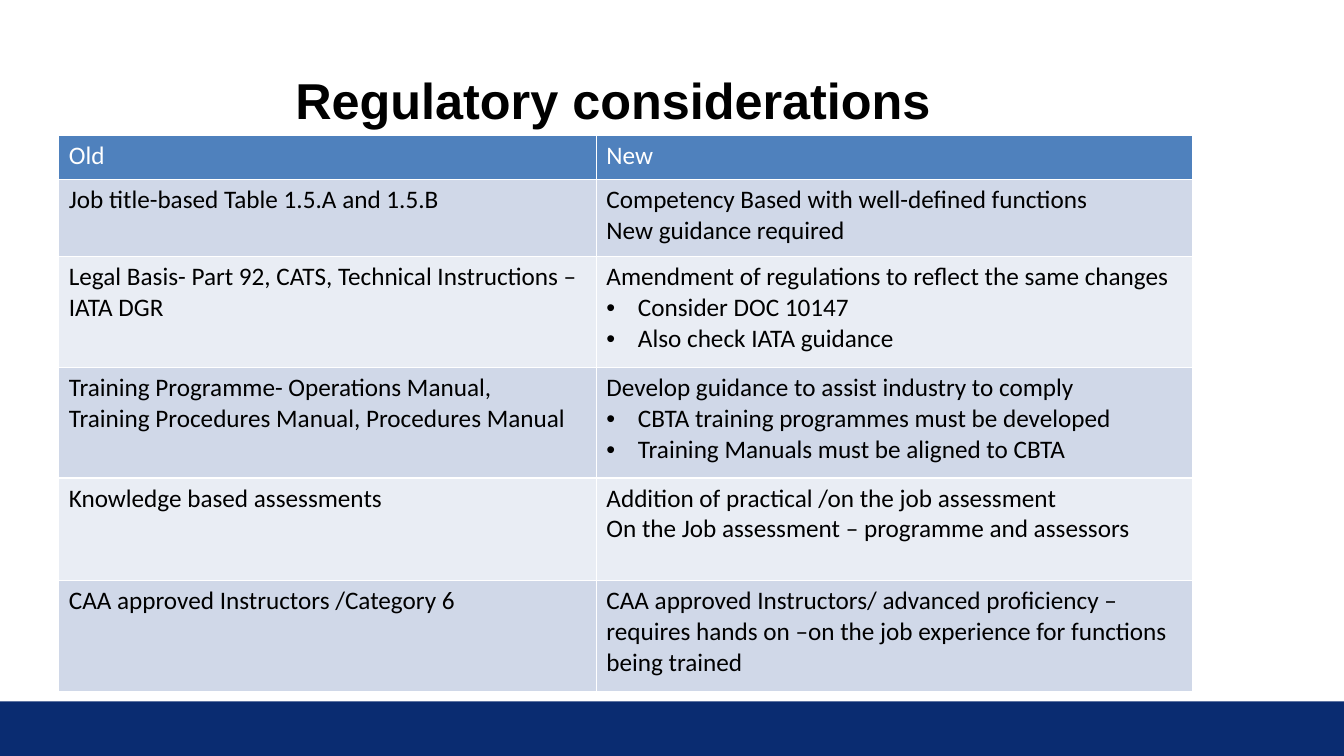
from dataclasses import dataclass
from lxml.etree import SubElement as Sub
from pptx import Presentation
from pptx.dml.color import RGBColor as Rgb
from pptx.enum.shapes import MSO_SHAPE as Kind
from pptx.enum.text import PP_ALIGN as Align
from pptx.oxml.ns import qn
from pptx.util import Pt

TITLE = "Regulatory considerations"
HEAD = (["Old"], ["New"])
ROWS = [
    (["Job title-based Table 1.5.A and 1.5.B"],
     ["Competency Based with well-defined functions", "New guidance required"]),
    (["Legal Basis- Part 92, CATS, Technical Instructions –IATA DGR"],
     ["Amendment of regulations to reflect the same changes",
      ("•", "Consider DOC 10147"), ("•", "Also check IATA guidance")]),
    (["Training Programme- Operations Manual,",
      "Training Procedures Manual, Procedures Manual"],
     ["Develop guidance to assist industry to comply",
      ("•", "CBTA training programmes must be developed"),
      ("•", "Training Manuals must be aligned to CBTA")]),
    (["Knowledge based assessments"],
     ["Addition of practical /on the job assessment",
      "On the Job assessment – programme and assessors"]),
    (["CAA approved Instructors /Category 6"],
     ["CAA approved Instructors/ advanced proficiency – requires hands on "
      "–on the job experience for functions being trained"]),
]
WIDTHS = (384, 426)
HEIGHTS = (31.5, 55, 79, 79, 73.5, 79)


@dataclass
class Theme:
    navy: str = "0A2C71"
    head: str = "4F81BD"
    bands: tuple = ("D0D8E8", "E9EDF4")
    ink: str = "000000"
    paper: str = "FFFFFF"
    title: int = 36
    body: int = 18
    rule: int = 1
    hang: float = 22.5


look = Theme()


def write(frame, lines, size, color, font="Calibri", bold=False, align=Align.LEFT):
    frame.word_wrap = True
    for i, line in enumerate(lines):
        para = frame.paragraphs[0] if i == 0 else frame.add_paragraph()
        mark, text = line if isinstance(line, tuple) else ("", line)
        para.alignment = align
        if mark:
            props = para._p.get_or_add_pPr()
            props.set("marL", str(Pt(look.hang)))
            props.set("indent", str(-Pt(look.hang)))
            Sub(props, qn("a:buFont"), typeface="Arial")
            Sub(props, qn("a:buChar"), char=mark)
        run = para.add_run()
        run.text = text
        run.font.name, run.font.size, run.font.bold = font, Pt(size), bold
        run.font.color.rgb = Rgb.from_string(color)


def paint(item, color):
    item.fill.solid()
    item.fill.fore_color.rgb = Rgb.from_string(color)


def edge(cell):
    props = cell._tc.get_or_add_tcPr()
    for side in "LRTB":
        line = Sub(props, qn("a:ln" + side), w=str(Pt(look.rule)))
        fill = Sub(line, qn("a:solidFill"))
        Sub(fill, qn("a:srgbClr"), val=look.paper)


def main():
    deck = Presentation()
    deck.slide_width, deck.slide_height = Pt(960), Pt(540)
    slide = deck.slides.add_slide(deck.slide_layouts[6])

    foot = slide.shapes.add_shape(Kind.RECTANGLE, 0, Pt(501), Pt(960), Pt(39))
    foot.shadow.inherit = False
    foot.line.fill.background()
    paint(foot, look.navy)

    grid = slide.shapes.add_table(
        len(HEIGHTS), len(WIDTHS), Pt(42), Pt(97),
        Pt(sum(WIDTHS)), Pt(sum(HEIGHTS))).table
    for col, width in zip(grid.columns, WIDTHS):
        col.width = Pt(width)
    for r, (row, height, cells) in enumerate(zip(grid.rows, HEIGHTS, [HEAD] + ROWS)):
        row.height = Pt(height)
        back = look.bands[(r - 1) % 2] if r else look.head
        ink = look.ink if r else look.paper
        for cell, lines in zip(row.cells, cells):
            edge(cell)
            paint(cell, back)
            write(cell.text_frame, lines, look.body, ink)

    box = slide.shapes.add_textbox(Pt(198), Pt(46), Pt(480), Pt(51))
    write(box.text_frame, [TITLE], look.title, look.ink,
          font="Arial", bold=True, align=Align.CENTER)
    deck.save("out.pptx")


if __name__ == "__main__":
    main()
